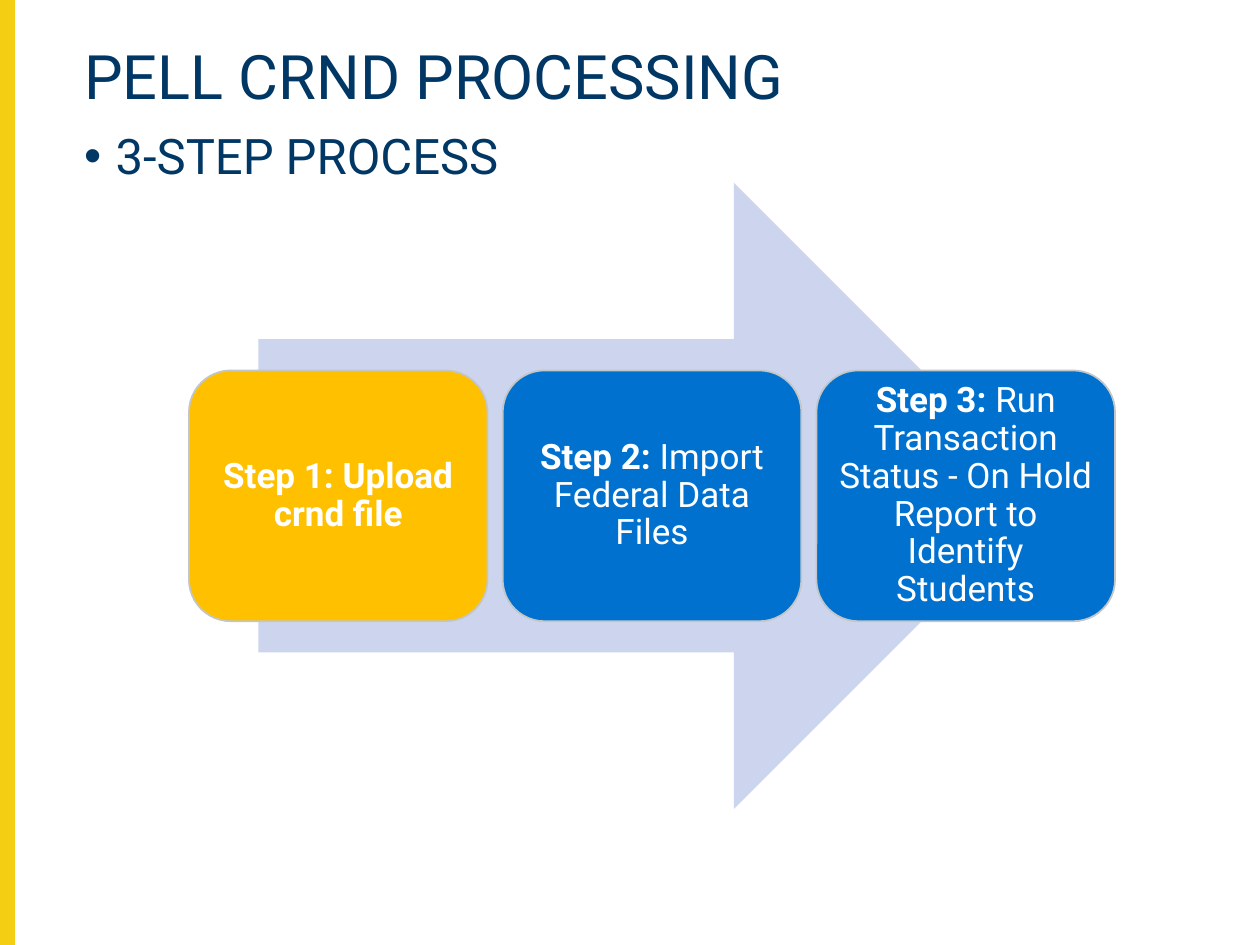
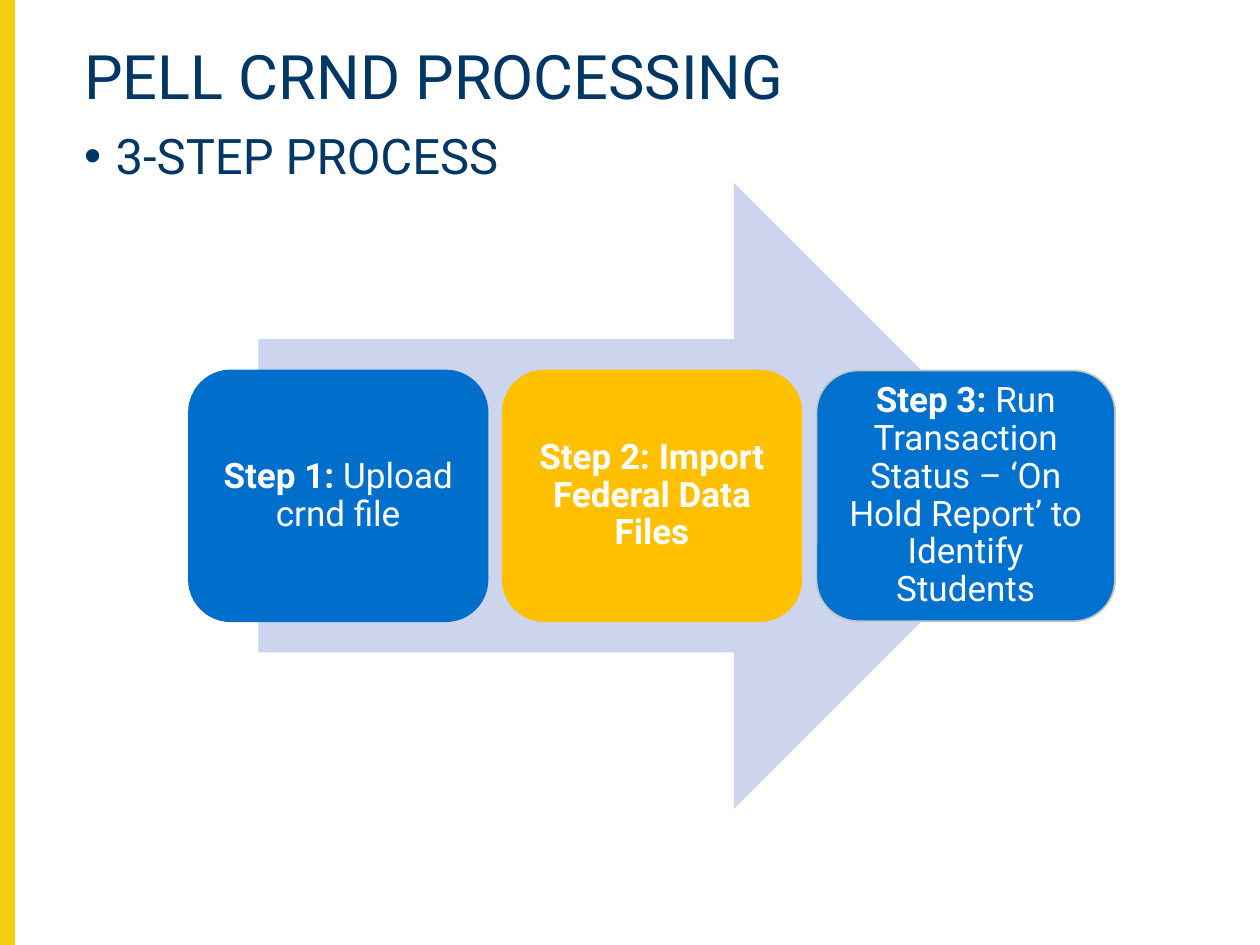
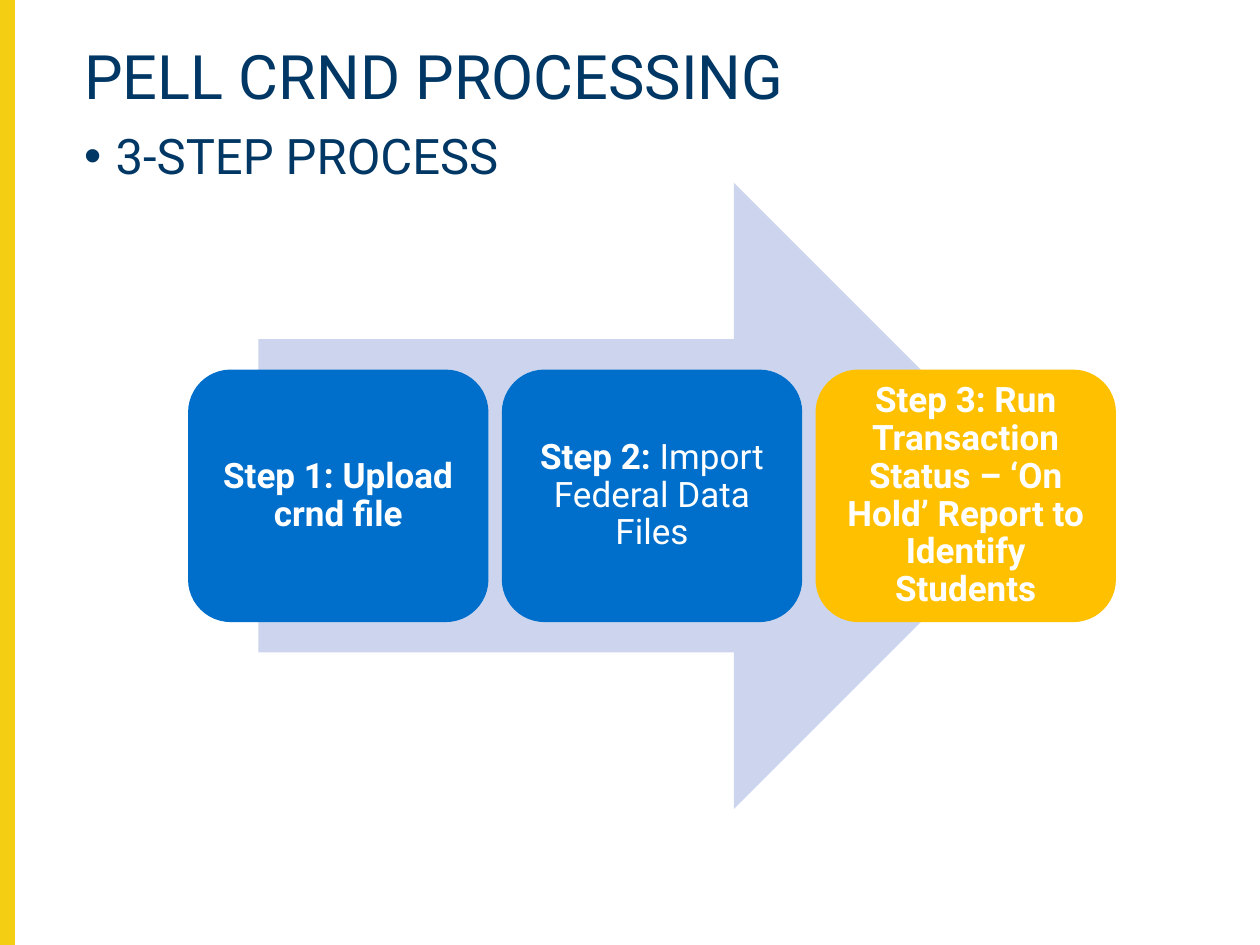
"""Build three slides that step through the Pell CRND process."""
import lxml.etree
import pptx
import pptx.dml.color
import pptx.enum.shapes
import pptx.enum.text
import pptx.oxml.ns
import pptx.util

Inches = pptx.util.Inches
Shapes = pptx.enum.shapes.MSO_SHAPE
Align = pptx.enum.text.PP_ALIGN
Anchor = pptx.enum.text.MSO_ANCHOR

TITLE = "PELL CRND PROCESSING"
SUBTITLE = "3-STEP PROCESS"
FONT = "Roboto"
NAVY, WHITE, BAND, ARROW = "003764", "FFFFFF", "F4CE12", "CCD5ED"
ACTIVE, BLUE, DEEP_BLUE, GREY = "FFC000", "0071CE", "006FCB", "C3C6C8"

# Each step: bold text, regular text, fill, outline
SLIDES = [
    [
        ("Step 1: Upload crnd file", "", ACTIVE, GREY),
        ("Step 2: ", "Import Federal Data Files", BLUE, GREY),
        ("Step 3: ", "Run Transaction Status - On Hold Report to Identify Students", BLUE, GREY),
    ],
    [
        ("Step 1: ", "Upload crnd file", DEEP_BLUE, DEEP_BLUE),
        ("Step 2: Import Federal Data Files", "", ACTIVE, ACTIVE),
        ("Step 3: ", "Run Transaction Status – ‘On Hold Report’ to Identify Students", BLUE, GREY),
    ],
    [
        ("Step 1: Upload crnd file", "", DEEP_BLUE, DEEP_BLUE),
        ("Step 2: ", "Import Federal Data Files", DEEP_BLUE, DEEP_BLUE),
        ("Step 3: Run Transaction Status – ‘On Hold’ Report to Identify Students", "", ACTIVE, ACTIVE),
    ],
]

STEP_LEFT, STEP_TOP, STEP_WIDTH, STEP_HEIGHT, STEP_GAP = 1.5, 2.94, 2.37, 1.99, 0.12
STEP_INSET = 0.08


def color(value):
    return pptx.dml.color.RGBColor.from_string(value)


def add_block(page, kind, area, fill, outline=None):
    block = page.shapes.add_shape(kind, *map(Inches, area))
    block.shadow.inherit = False
    block.fill.solid()
    block.fill.fore_color.rgb = color(fill)
    if outline:
        block.line.color.rgb = color(outline)
        block.line.width = pptx.util.Pt(1)
    else:
        block.line.fill.background()
    return block


def write(box, text, size, ink, bold=False, regular="", align=Align.LEFT,
          anchor=Anchor.TOP, inset=None, bullet=False):
    frame = box.text_frame
    frame.word_wrap = True
    frame.vertical_anchor = anchor
    if inset is not None:
        frame.margin_left = frame.margin_right = Inches(inset)
        frame.margin_top = frame.margin_bottom = Inches(inset)
    para = frame.paragraphs[0]
    para.alignment = align
    para.line_spacing = 0.9
    for words, weight in ((text, bold), (regular, False)):
        if words:
            span = para.add_run()
            span.text = words
            span.font.name = FONT
            span.font.size = pptx.util.Pt(size)
            span.font.bold = weight
            span.font.color.rgb = color(ink)
    if bullet:
        para.space_before = pptx.util.Pt(10)
        properties = para._p.get_or_add_pPr()
        properties.set("marL", str(Inches(0.25)))
        properties.set("indent", str(Inches(-0.25)))
        for tag, name, value in (("a:buFont", "typeface", "Arial"), ("a:buChar", "char", "•")):
            mark = lxml.etree.SubElement(properties, pptx.oxml.ns.qn(tag))
            mark.set(name, value)


def add_text(page, area, text, **style):
    write(page.shapes.add_textbox(*map(Inches, area)), text, **style)


def add_frame(page):
    add_block(page, Shapes.RECTANGLE, (0, 0, 0.11, 7.5), BAND, BAND)
    add_text(page, (0.57, 0.32, 9.08, 0.86), TITLE, size=35, ink=NAVY)
    add_text(page, (0.57, 1, 9.12, 5.72), SUBTITLE, size=28, ink=NAVY, bullet=True)


def add_steps(page, steps):
    add_block(page, Shapes.RIGHT_ARROW, (2.05, 1.45, 6.26, 4.97), ARROW)
    for index, (bold_text, regular, fill, outline) in enumerate(steps):
        left = STEP_LEFT + index * (STEP_WIDTH + STEP_GAP)
        area = (left, STEP_TOP, STEP_WIDTH, STEP_HEIGHT)
        step = add_block(page, Shapes.ROUNDED_RECTANGLE, area, fill, outline)
        write(step, bold_text, size=20, ink=WHITE, bold=True, regular=regular,
              align=Align.CENTER, anchor=Anchor.MIDDLE, inset=STEP_INSET)


def main():
    deck = pptx.Presentation()
    deck.slide_width, deck.slide_height = Inches(10), Inches(7.5)
    for steps in SLIDES:
        page = deck.slides.add_slide(deck.slide_layouts[6])
        add_frame(page)
        add_steps(page, steps)
    deck.save("out.pptx")


if __name__ == "__main__":
    main()
